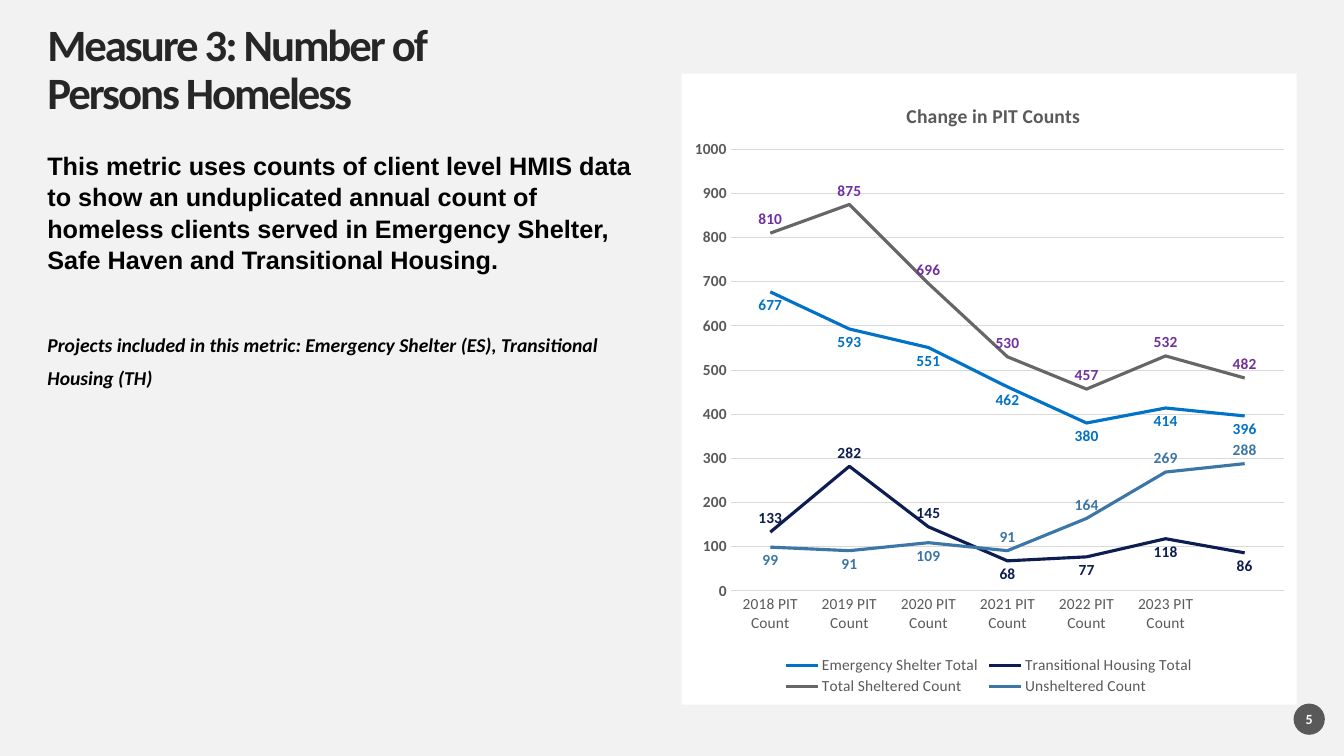
import pptx
import pptx.chart.data
import pptx.dml.color
import pptx.enum.chart
import pptx.enum.shapes
import pptx.enum.text
import pptx.oxml
import pptx.oxml.ns
import pptx.util

Inches = pptx.util.Inches
Pt = pptx.util.Pt
GREY = "595959"
PALE_GREY = "D9D9D9"
YEARS = range(2018, 2024)
COUNTS = [
    ("Emergency Shelter Total", [677, 593, 551, 462, 380, 414, 396], "0072C7", "0072C7", range(7)),
    ("Transitional Housing Total", [133, 282, 145, 68, 77, 118, 86], "0D1D51", "0D1D51", range(3, 7)),
    ("Total Sheltered Count", [810, 875, 696, 530, 457, 532, 482], "666666", "7030A0", ()),
    ("Unsheltered Count", [99, 91, 109, 91, 164, 269, 288], "3C76A6", "3C76A6", range(3)),
]


def colour(value):
    return pptx.dml.color.RGBColor.from_string(value)


def set_font(font, size, value, bold=False, italic=False, name="Calibri"):
    font.name = name
    font.size = Pt(size)
    font.bold = bold
    font.italic = italic
    font.color.rgb = colour(value)


def set_frame(shape, box, anchor):
    shape.left, shape.top, shape.width, shape.height = [Inches(length) for length in box]
    frame = shape.text_frame
    frame.margin_left = frame.margin_right = frame.margin_top = frame.margin_bottom = 0
    frame.word_wrap = True
    frame.auto_size = pptx.enum.text.MSO_AUTO_SIZE.NONE
    frame.vertical_anchor = anchor
    return frame


def add_heading(page, box):
    frame = set_frame(page.shapes.title, box, pptx.enum.text.MSO_ANCHOR.MIDDLE)
    para = frame.paragraphs[0]
    span = para.add_run()
    span.text = "Measure 3: Number of Persons Homeless"
    span.font._element.set("spc", "-150")
    para.alignment = pptx.enum.text.PP_ALIGN.LEFT
    para.line_spacing = 0.9
    set_font(para.font, 32, "262626", bold=True)


def add_description(page, box):
    frame = set_frame(page.placeholders[1], box, pptx.enum.text.MSO_ANCHOR.TOP)
    metric = frame.paragraphs[0]
    metric.text = (
        "This metric uses counts of client level HMIS data to show an unduplicated annual count "
        "of homeless clients served in Emergency Shelter, Safe Haven and Transitional Housing."
    )
    projects = frame.add_paragraph()
    projects.text = "Projects included in this metric: Emergency Shelter (ES), Transitional Housing (TH)"
    for para, spacing, before in ((metric, 1.04, 0), (projects, 1.4, 35)):
        properties = para._p.get_or_add_pPr()
        properties.set("marL", "0")
        properties.set("indent", "0")
        properties.append(pptx.oxml.parse_xml(f"<a:buNone {pptx.oxml.ns.nsdecls('a')}/>"))
        para.line_spacing = spacing
        para.space_before = Pt(before)
        para.space_after = Pt(0)
    set_font(metric.font, 18, "000000", bold=True, name="Arial")
    set_font(projects.font, 14, "000000", bold=True, italic=True)


def place_part(chart, part, before, x, y, width=None, height=None, inner=False):
    parent = chart.element.xpath(f".//c:{part}")[0]
    for old in parent.xpath("./c:layout"):
        parent.remove(old)
    settings = [("layoutTarget", "inner")] if inner else []
    settings += [("xMode", "edge"), ("yMode", "edge"), ("x", x), ("y", y)]
    if width:
        settings += [("w", width), ("h", height)]
    tags = "".join(f'<c:{tag} val="{value}"/>' for tag, value in settings)
    layout = pptx.oxml.parse_xml(
        f"<c:layout {pptx.oxml.ns.nsdecls('c')}><c:manualLayout>{tags}</c:manualLayout></c:layout>"
    )
    if before:
        parent.xpath(f"./c:{before}")[0].addnext(layout)
    else:
        parent.insert(0, layout)


def style_series(series, line, label, below):
    series.smooth = False
    series.format.line.color.rgb = colour(line)
    series.format.line.width = Pt(2.25)
    series.marker.style = pptx.enum.chart.XL_MARKER_STYLE.NONE
    labels = series.data_labels
    labels.show_value = True
    labels.position = pptx.enum.chart.XL_LABEL_POSITION.ABOVE
    set_font(labels.font, 11, label, bold=True)
    for index in below:
        point_label = series.points[index].data_label
        set_font(point_label.font, 11, label, bold=True)
        point_label.position = pptx.enum.chart.XL_LABEL_POSITION.BELOW


def style_axes(chart):
    for axis, bold in ((chart.category_axis, False), (chart.value_axis, True)):
        axis.major_tick_mark = pptx.enum.chart.XL_TICK_MARK.NONE
        axis.minor_tick_mark = pptx.enum.chart.XL_TICK_MARK.NONE
        set_font(axis.tick_labels.font, 11, GREY, bold=bold)
    values = chart.value_axis
    values.minimum_scale, values.maximum_scale, values.major_unit = 0, 1000, 100
    values.has_major_gridlines = True
    values.format.line.fill.background()
    for line in (chart.category_axis.format.line, values.major_gridlines.format.line):
        line.color.rgb = colour(PALE_GREY)
        line.width = Pt(0.75)


def add_counts_chart(page, box):
    data = pptx.chart.data.CategoryChartData()
    data.categories = [f"{year} PIT Count" for year in YEARS] + [""]
    for name, values, *_ in COUNTS:
        data.add_series(name, values)
    chart = page.shapes.add_chart(
        pptx.enum.chart.XL_CHART_TYPE.LINE, *[Inches(length) for length in box], data
    ).chart
    set_font(chart.font, 10, "000000", bold=True)
    chart.element.xpath("./c:chart")[0].addnext(pptx.oxml.parse_xml(
        f"<c:spPr {pptx.oxml.ns.nsdecls('c', 'a')}><a:solidFill><a:srgbClr val=\"FFFFFF\"/>"
        "</a:solidFill><a:ln><a:noFill/></a:ln></c:spPr>"
    ))
    chart.has_title = True
    heading = chart.chart_title.text_frame.paragraphs[0]
    heading.text = "Change in PIT Counts"
    set_font(heading.font, 14, GREY, bold=True)
    chart.has_legend = True
    chart.legend.position = pptx.enum.chart.XL_LEGEND_POSITION.BOTTOM
    chart.legend.include_in_layout = False
    set_font(chart.legend.font, 11, GREY)
    style_axes(chart)
    for series, (_, _, line, label, below) in zip(chart.plots[0].series, COUNTS):
        style_series(series, line, label, below)
    place_part(chart, "chart/c:title", "tx", 0.36, 0.04)
    place_part(chart, "plotArea", None, 0.08, 0.12, 0.9, 0.7, inner=True)
    place_part(chart, "legend", "legendPos", 0.16, 0.92, 0.68, 0.07)


def add_page_number(page, box):
    badge = page.shapes.add_shape(
        pptx.enum.shapes.MSO_SHAPE.OVAL, *[Inches(length) for length in box]
    )
    badge.shadow.inherit = False
    badge.fill.solid()
    badge.fill.fore_color.rgb = colour(GREY)
    badge.line.fill.background()
    para = set_frame(badge, box, pptx.enum.text.MSO_ANCHOR.MIDDLE).paragraphs[0]
    para.text = "5"
    para.alignment = pptx.enum.text.PP_ALIGN.CENTER
    set_font(para.font, 10, "FFFFFF", bold=True)


def main():
    deck = pptx.Presentation()
    deck.slide_width, deck.slide_height = Inches(13.33), Inches(7.5)
    page = deck.slides.add_slide(deck.slide_layouts[1])
    page.background.fill.solid()
    page.background.fill.fore_color.rgb = colour("F2F2F2")
    add_description(page, (0.47, 1.48, 6.02, 5.29))
    add_heading(page, (0.47, 0.47, 4.47, 0.47))
    add_page_number(page, (12.83, 6.98, 0.31, 0.31))
    add_counts_chart(page, (6.76, 0.73, 6.1, 6.26))
    deck.save("out.pptx")


if __name__ == "__main__":
    main()
